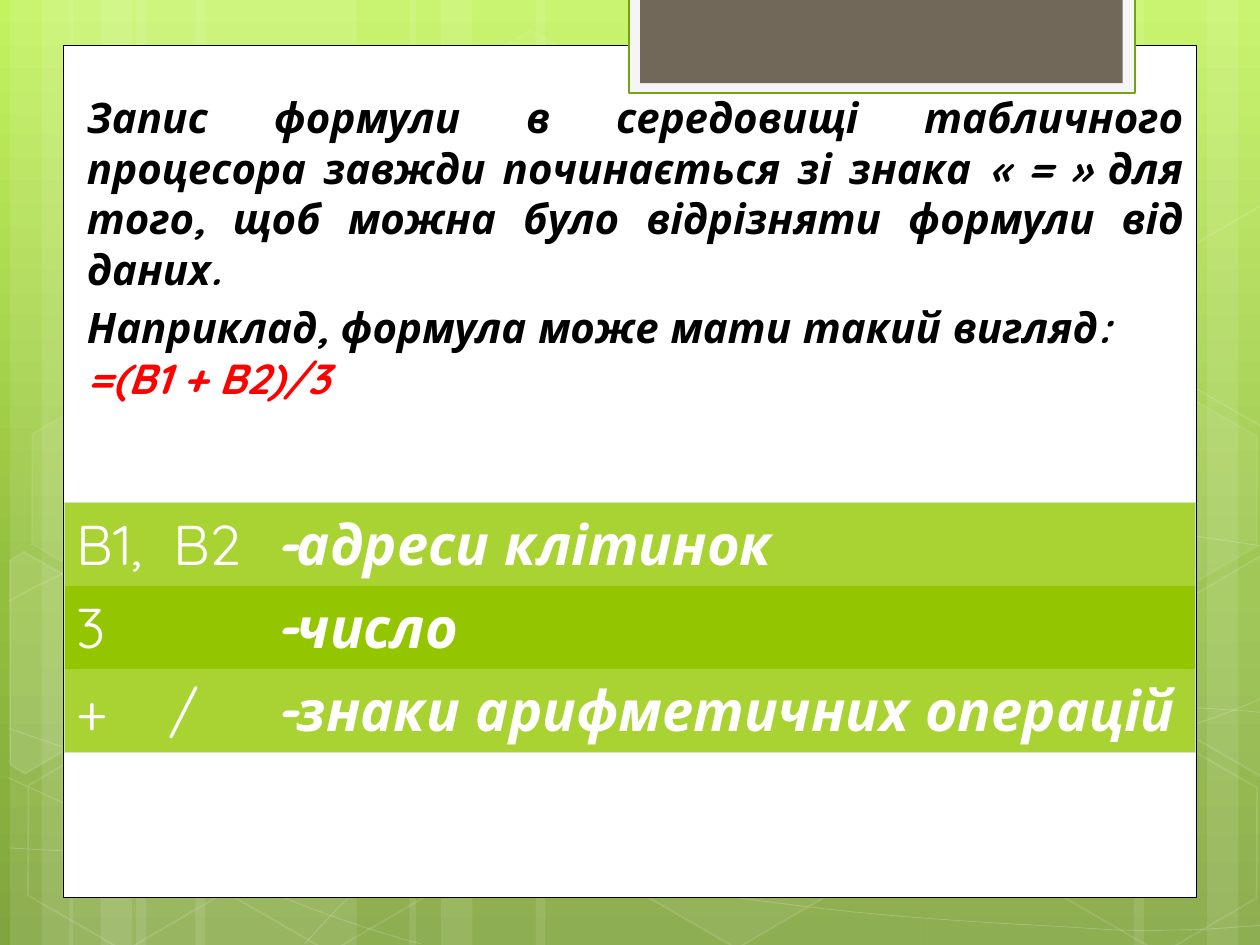
from pptx import Presentation
from pptx.dml.color import RGBColor
from pptx.enum.shapes import MSO_SHAPE
from pptx.enum.text import PP_ALIGN
from pptx.oxml import parse_xml
from pptx.oxml.ns import nsdecls, qn
from pptx.util import Inches, Pt
from copy import deepcopy

RECT, HEX = MSO_SHAPE.RECTANGLE, MSO_SHAPE.HEXAGON
LEFT, JUST = PP_ALIGN.LEFT, PP_ALIGN.JUSTIFY
WHITE, BLACK, RED = "FFFFFF", "000000", "FF0000"
FONT = "Quicksand"

SKY = [(0, "C3F35F"), (0.62, "93BF3F"), (1, "81A53E")]
BANDS = [(0, 0.5), (0.25, 0.83), (1, 1.75)]
WAVES = [
    [(0.07, 6.73), (0.61, 6.76), (1.15, 6.79), (1.9, 6.78), (2.65, 6.77), (3.58, 6.75), (4.58, 6.65),
     (5.58, 6.55), (7, 6.36), (7.92, 6.17), (8.83, 5.98), (9.77, 5.68), (10.07, 5.51)],
    [(0.07, 4.77), (0.36, 4.61), (0.65, 4.46), (1.21, 4.31), (1.78, 4.16), (2.59, 3.94), (3.47, 3.87),
     (4.36, 3.8), (5.44, 3.79), (6.54, 3.87), (7.64, 3.95), (9.47, 4.26), (10.07, 4.34)],
    [(0.06, 6.17), (1.27, 6.72), (2.47, 7.27), (3.34, 7.49)],
    [(0.07, 5.78), (0.38, 5.89), (0.7, 6), (1.28, 6.16), (1.86, 6.31), (2.73, 6.56), (3.57, 6.73),
     (4.4, 6.9), (5.45, 7.08), (6.28, 7.18), (7.11, 7.29), (8, 7.33), (8.53, 7.36),
     (9.05, 7.4), (9.19, 7.38), (9.45, 7.38), (9.71, 7.37), (9.89, 7.35), (10.07, 7.34)],
    [(2.42, 7.49), (2.6, 7.29), (2.78, 7.09), (3.02, 6.91), (3.26, 6.73), (3.6, 6.53), (3.88, 6.39),
     (4.16, 6.25), (4.33, 6.19), (4.7, 6.09), (5.06, 5.99), (5.73, 5.85), (6.08, 5.78),
     (6.44, 5.71), (6.49, 5.71), (6.8, 5.69), (7.11, 5.66), (7.6, 5.63), (7.94, 5.62),
     (8.29, 5.61), (8.86, 5.62), (8.86, 5.62), (9.08, 5.62), (9.31, 5.62), (9.53, 5.62),
     (9.71, 5.63), (9.88, 5.64), (10.06, 5.66)],
]
CELLS = [(3.34, 0.36, 4, 8), (4.97, 5.89, 6, 12), (0.11, 5.91, 0, 12), (0.14, 3.12, 7, 8),
         (1.74, 5.92, 0, 12), (7.53, 4.53, 10, 12), (8.34, 5.93, 0, 12), (8.34, 3.14, 7, 8)]
EDGES = [
    ([(0.08, 4.45), (0.19, 4.38), (0.96, 4.82), (0.95, 5.7), (0.2, 6.14), (0.08, 6.07)], 10),
    ([(9.26, 4.85), (10.01, 4.41), (10.09, 4.46), (10.09, 6.13), (10.02, 6.17), (9.26, 5.73)], 4),
    ([(9.26, 2.07), (10.01, 1.63), (10.1, 1.68), (10.09, 3.35), (10.02, 3.39), (9.26, 2.95)], 0),
]
RULE = "Запис формули в середовищі табличного процесора завжди починається зі знака « = » для того, щоб можна було відрізняти формули від даних."
LEAD, SUM = "Наприклад, формула може мати такий вигляд: ", "=(B1 + B2)/3"
ROWS = [("B1,  B2", "-адреси клітинок"), ("3", "-число"), ("+    /", "-знаки арифметичних операцій")]


def rgb(code):
    return RGBColor.from_string(code)


def fade(node, share):
    tint = node.find(qn("a:solidFill")).find(qn("a:srgbClr"))
    tint.append(parse_xml(f'<a:alpha {nsdecls("a")} val="{share * 1000}"/>'))


def bend(shape):
    steps = list(shape.element.iter(qn("a:lnTo")))
    for i in range(0, len(steps), 3):
        arc = parse_xml(f'<a:cubicBezTo {nsdecls("a")}/>')
        steps[i].addprevious(arc)
        for step in steps[i:i + 3]:
            arc.append(step[0])
            step.getparent().remove(step)


class Deck:
    """Holds the style and the current slide."""

    def __init__(self):
        self.file = Presentation()
        self.file.slide_width, self.file.slide_height = Inches(10), Inches(7.5)
        self.slide = self.file.slides.add_slide(self.file.slide_layouts[6])
        self.shapes = self.slide.shapes

    def sky(self, stops):
        fill = self.slide.background.fill
        fill.gradient()
        fill.gradient_angle = 270
        group = next(self.slide.element.iter(qn("a:gsLst")))
        group.append(deepcopy(group[0]))
        for stop, (place, code) in zip(fill.gradient_stops, stops):
            stop.color.rgb, stop.position = rgb(code), place

    def paint(self, shape, fill=None, alpha=100, line=None, width=1, clear=100):
        shape.shadow.inherit = False
        props = shape.element.spPr
        if fill:
            shape.fill.solid()
            shape.fill.fore_color.rgb = rgb(fill)
            if alpha < 100:
                fade(props, alpha)
        else:
            shape.fill.background()
        if line:
            shape.line.color.rgb, shape.line.width = rgb(line), Pt(width)
            if clear < 100:
                fade(props.find(qn("a:ln")), clear)
        else:
            shape.line.fill.background()

    def block(self, kind, box, **style):
        shape = self.shapes.add_shape(kind, *map(Inches, box))
        self.paint(shape, **style)
        return shape

    def hexa(self, x, y, alpha, clear):
        shape = self.block(HEX, (x, y, 1.75, 1.52), fill=WHITE if alpha else None,
                           alpha=alpha, line=WHITE, clear=clear)
        shape.adjustments[0] = 0.285
        shape.rotation = 30

    def trace(self, dots, close, **style):
        spots = [(Inches(x), Inches(y)) for x, y in dots]
        pen = self.shapes.build_freeform(*spots[0])
        pen.add_line_segments(spots[1:], close=close)
        shape = pen.convert_to_shape()
        self.paint(shape, **style)
        return shape

    def ink(self, run, size, code, strong):
        font = run.font
        font.name, font.size, font.color.rgb = FONT, Pt(size), rgb(code)
        font.bold = font.italic = strong

    def text(self, box, paras):
        frame = self.shapes.add_textbox(*map(Inches, box)).text_frame
        frame.word_wrap = True
        frame.margin_left = Inches(0.18)
        for i, (align, parts) in enumerate(paras):
            para = frame.add_paragraph() if i else frame.paragraphs[0]
            para.alignment, para.space_before = align, Pt(4.8)
            for words, code in parts:
                run = para.add_run()
                run.text = words
                self.ink(run, 24, code, True)

    def edge(self, cell, side, outer):
        fill = '<a:solidFill><a:srgbClr val="D2E5BD"/></a:solidFill>' if outer else "<a:noFill/>"
        cell._tc.get_or_add_tcPr().insert(0, parse_xml(
            f'<a:ln{side} {nsdecls("a")} w="9525">{fill}</a:ln{side}>'))

    def table(self, x, y, wide, high, rows, fills):
        grid = self.shapes.add_table(len(rows), len(wide), Inches(x), Inches(y),
                                     Inches(sum(wide)), Inches(high * len(rows))).table
        grid.first_row = grid.horz_banding = False
        for col, width in zip(grid.columns, wide):
            col.width = Inches(width)
        last, end = len(rows) - 1, len(wide) - 1
        for r, row in enumerate(rows):
            for c, words in enumerate(row):
                cell = grid.cell(r, c)
                cell.text = words
                self.ink(cell.text_frame.paragraphs[0].runs[0], 32, WHITE, c > 0)
                cell.fill.solid()
                cell.fill.fore_color.rgb = rgb(fills[r % 2])
                for side, outer in (("B", r == last), ("T", r == 0), ("R", c == end), ("L", c == 0)):
                    self.edge(cell, side, outer)


def main():
    deck = Deck()
    deck.sky(SKY)
    for base in (0.08, 0.55, 3.25):
        for gap, width in BANDS:
            wide = 3.08 if base == 3.25 and gap == 1 else width
            deck.block(RECT, (base + gap, 0, wide, 7.5), fill=WHITE, alpha=10)
    for gap, width in BANDS:
        deck.block(RECT, (10.08 - gap - width, 0, width, 7.5), fill=WHITE, alpha=10)
    for knots in WAVES:
        bend(deck.trace(knots, False, line=WHITE, width=0.5, clear=20))
    for cell in CELLS:
        deck.hexa(*cell)
    for dots, alpha in EDGES:
        deck.trace(dots, True, fill=WHITE if alpha else None, alpha=alpha, line=WHITE, clear=12)
    deck.block(RECT, (0.5, 0.36, 9, 6.76), fill=WHITE, line=BLACK, width=0.5)
    deck.block(RECT, (4.99, -0.02, 4.02, 0.76), fill="F5F5F5", line="74A510", width=1.25)
    deck.block(RECT, (5.08, -0.02, 3.83, 0.68), fill="71685A")
    deck.text((0.51, 0.68, 8.98, 5.7), [(JUST, [(RULE, BLACK)]), (LEFT, [(LEAD, BLACK), (SUM, RED)])])
    deck.table(0.51, 3.99, (1.57, 7.41), 0.66, ROWS, ("A9D233", "94C600"))
    deck.file.save("out.pptx")


if __name__ == "__main__":
    main()
